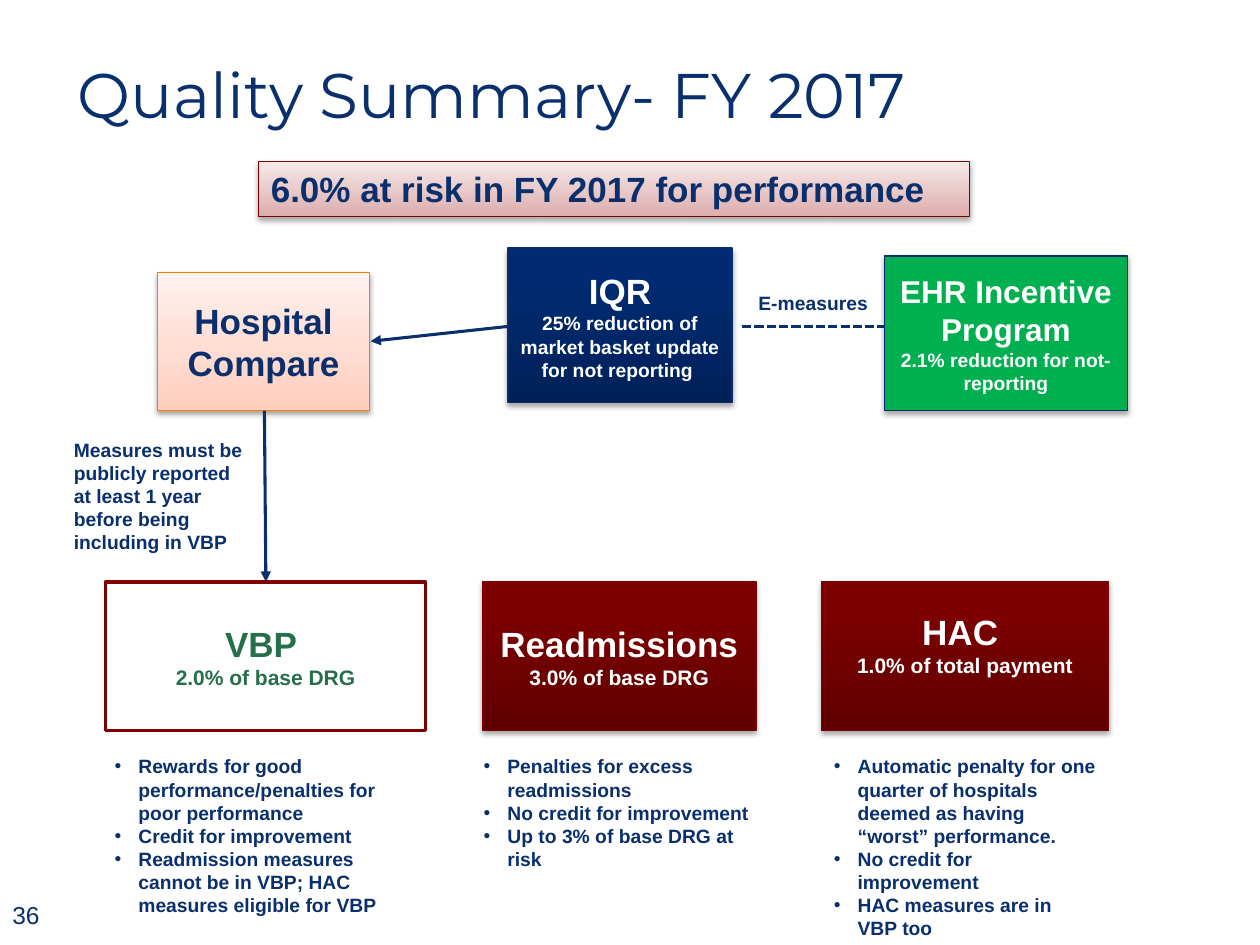
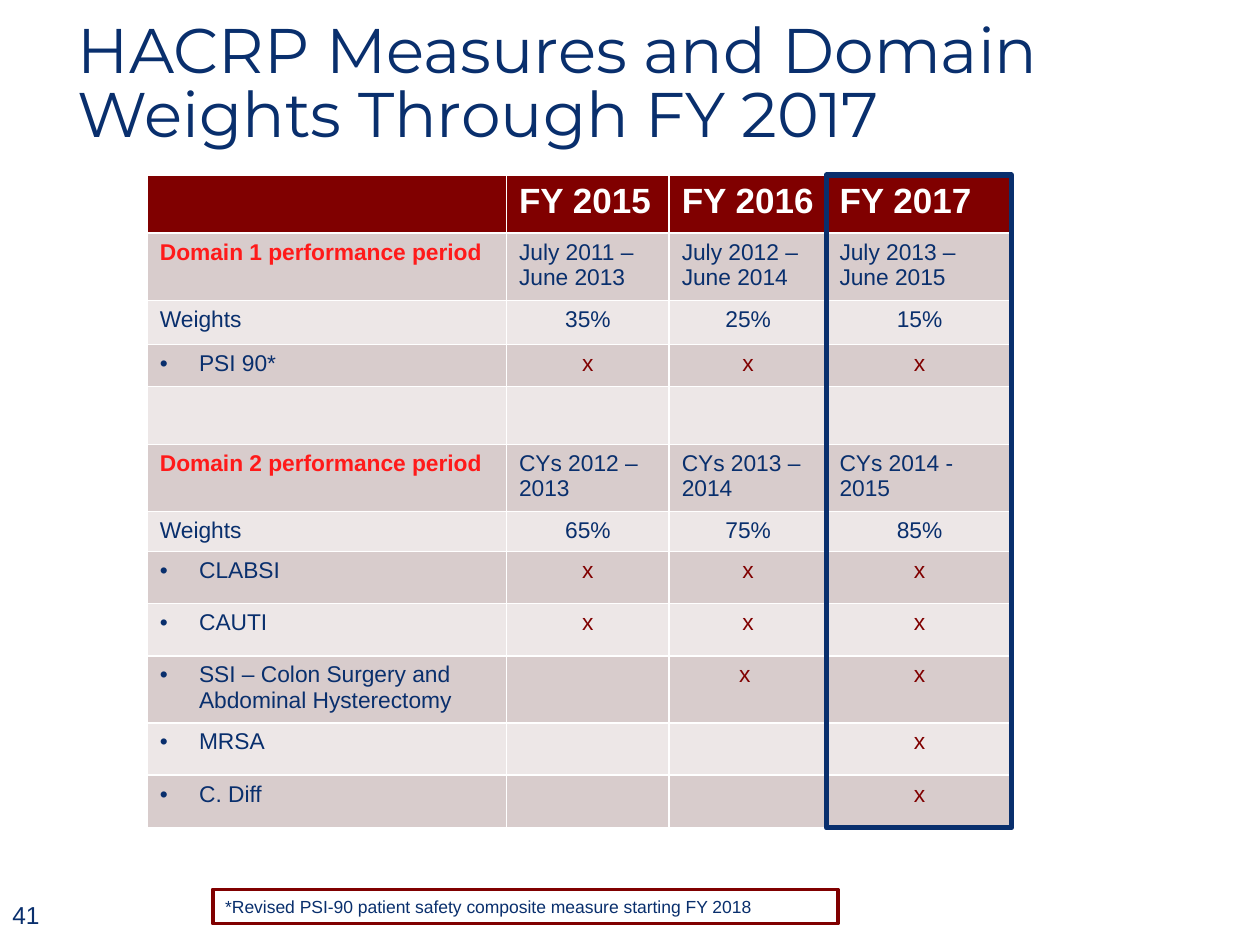
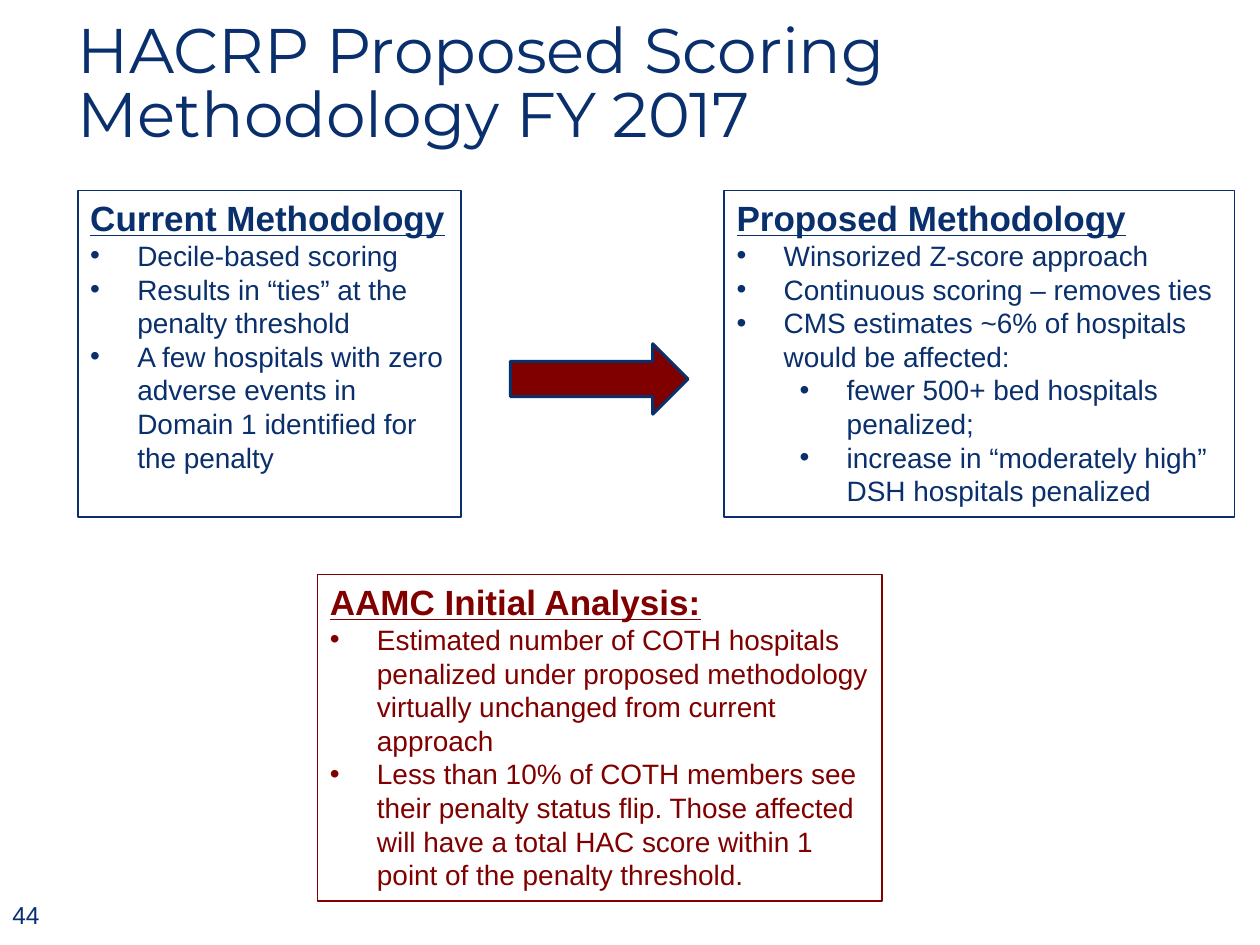
from lxml import etree
from pptx import Presentation
from pptx import util as u
from pptx.dml import color
from pptx.enum import dml, shapes, text
from pptx.oxml import ns

NAVY, RED, WHITE, GREEN = "092F6D", "800000", "FFFFFF", "00B050"
PINK, PALE, ALERT, EDGE = "D8CCCC", "EDE7E7", "FF1A1A", "062D6D"
MID, TOP = text.MSO_ANCHOR.MIDDLE, text.MSO_ANCHOR.TOP
MAROON = [("600000", 0), ("7C0000", 0.8)]


def rgb(code):
    """Turn a hex string into a colour."""
    return color.RGBColor.from_string(code)


def area(*sizes):
    """Turn centimetres into lengths."""
    return [u.Cm(size) for size in sizes]


def child(parent, tag, **attrs):
    """Append a drawing element with its attributes."""
    return etree.SubElement(parent, ns.qn(tag), attrs)


def style(para, size, ink=NAVY, bold=False, face="Arial"):
    """Set the font of a paragraph."""
    font = para.font
    font.name, font.size, font.bold = face, u.Pt(size), bold
    font.color.rgb = rgb(ink)


def bullet(para, indent, level=0):
    """Give a paragraph a hanging bullet."""
    para.level = level
    props = para._p.get_or_add_pPr()
    props.set("marL", str(u.Cm(indent + 1.27 * level)))
    props.set("indent", str(-u.Cm(indent)))
    child(props, "a:buFont", typeface="Arial")
    child(props, "a:buChar", char="•")


def write(frame, lines, ink=NAVY, bold=False, align=None, anchor=TOP):
    """Fill a frame with lines of text and size."""
    frame.word_wrap, frame.vertical_anchor = True, anchor
    for i, (words, size) in enumerate(lines):
        para = frame.add_paragraph() if i else frame.paragraphs[0]
        para.text = words
        para.alignment = align or text.PP_ALIGN.LEFT
        style(para, size, ink, bold)


def label(slide, box, words, size, bold=False, anchor=TOP):
    """Add a plain text box."""
    frame = slide.shapes.add_textbox(*area(*box)).text_frame
    write(frame, [(words, size)], bold=bold, anchor=anchor)


def points(slide, box, items):
    """Add a box of small bold bullets."""
    frame = slide.shapes.add_textbox(*area(*box)).text_frame
    frame.word_wrap = True
    for i, item in enumerate(items):
        para = frame.add_paragraph() if i else frame.paragraphs[0]
        para.text = item
        bullet(para, 0.48)
        style(para, 11, bold=True)


def block(slide, box, fill, edge, width=0.75, kind=shapes.MSO_SHAPE.RECTANGLE):
    """Add a shape with a plain, graded or no fill."""
    shape = slide.shapes.add_shape(kind, *area(*box))
    shape.shadow.inherit = False
    if fill is None:
        shape.fill.background()
    elif isinstance(fill, str):
        shape.fill.solid()
        shape.fill.fore_color.rgb = rgb(fill)
    else:
        shape.fill.gradient()
        shape.fill.gradient_angle = 90
        for stop, (code, place) in zip(shape.fill.gradient_stops, fill):
            stop.color.rgb, stop.position = rgb(code), place
    shape.line.color.rgb, shape.line.width = rgb(edge), u.Pt(width)
    return shape


def shade(shape):
    """Cast a soft shadow below a shape."""
    effects = shape._element.spPr.find(ns.qn("a:effectLst"))
    cast = child(effects, "a:outerShdw", blurRad=str(u.Pt(3.1)),
                 dist=str(u.Pt(1.8)), dir="5400000", rotWithShape="0")
    child(child(cast, "a:srgbClr", val="000000"), "a:alpha", val="35000")


def card(slide, box, fill, edge, lines, ink=WHITE, width=0.75):
    """Add a box with centred bold lines."""
    shape = block(slide, box, fill, edge, width)
    write(shape.text_frame, lines, ink, True, text.PP_ALIGN.CENTER, MID)
    return shape


def link(slide, ends, dashed=False):
    """Draw a dashed line or an arrow."""
    line = slide.shapes.add_connector(shapes.MSO_CONNECTOR.STRAIGHT, *area(*ends))
    line.line.color.rgb, line.line.width = rgb(NAVY), u.Pt(1.75)
    if dashed:
        line.line.dash_style = dml.MSO_LINE.SQUARE_DOT
    else:
        child(line.line._get_or_add_ln(), "a:tailEnd", type="triangle")
    child(line._element.spPr, "a:effectLst")


def panel(slide, box, head, items, ink):
    """Add an outlined box with a heading and bullets of text and level."""
    frame = block(slide, box, None, ink, 1).text_frame
    write(frame, [(head, 20)], ink, True)
    frame.paragraphs[0].font.underline = True
    for words, level in items:
        para = frame.add_paragraph()
        para.text = words
        para.alignment = text.PP_ALIGN.LEFT
        bullet(para, 0.95, level)
        style(para, 16, ink)


def grid(slide, spot, widths, rows):
    """Add the measures table from rows of height and cells."""
    tall = sum(height for height, _ in rows)
    table = slide.shapes.add_table(
        len(rows), len(widths), *area(*spot, sum(widths), tall)).table
    for col, width in zip(table.columns, widths):
        col.width = u.Cm(width)
    for r, (height, cells) in enumerate(rows):
        table.rows[r].height = u.Cm(height)
        for c, words in enumerate(cells):
            cell = table.cell(r, c)
            cell.fill.solid()
            cell.fill.fore_color.rgb = rgb(RED if r == 0 else PINK if r % 2 else PALE)
            para = cell.text_frame.paragraphs[0]
            para.text = words.removeprefix("• ")
            domain = words.startswith("Domain")
            if words.startswith("•"):
                bullet(para, 0.79)
            if words.endswith("%") or words.strip() == "x":
                para.alignment = text.PP_ALIGN.CENTER
            ink = (WHITE if r == 0 else ALERT if domain
                   else RED if words.strip() == "x" else NAVY)
            style(para, 13 if r else 20, ink, r == 0 or domain)


def start(deck, title, number, top=1.3):
    """Add a slide with its title and number."""
    slide = deck.slides.add_slide(deck.slide_layouts[6])
    frame = slide.shapes.add_textbox(*area(1.57, top, 23.29, 1.73)).text_frame
    frame.margin_left = frame.margin_right = 0
    frame.margin_top = frame.margin_bottom = 0
    write(frame, [(title, 36)], anchor=text.MSO_ANCHOR.BOTTOM)
    frame.paragraphs[0].line_spacing = 0.85
    frame.paragraphs[0].font.name = "Montserrat"
    label(slide, (0, 17.93, 5.92, 1.02), number, 14, anchor=MID)
    return slide


def summary(deck):
    """Build the summary of quality programs."""
    slide = start(deck, "Quality Summary- FY 2017", "36", 0.91)
    banner = block(slide, (5.21, 3.25, 14.33, 1.12),
                   [("DDADAD", 0), ("F6E9E9", 1)], "7D0000")
    write(banner.text_frame, [("6.0% at risk in FY 2017 for performance", 20)], bold=True)
    iqr = card(slide, (10.24, 5, 4.52, 3.12), [("002158", 0), ("002B72", 0.8)], EDGE,
               [("IQR", 20),
                ("25% reduction of market basket update for not reporting ", 11)])
    compare = card(slide, (3.18, 5.49, 4.27, 2.79), [("FFCDBD", 0), ("FFF1EE", 1)],
                   "F97D00", [("Hospital Compare", 20)], NAVY)
    ehr = card(slide, (17.83, 5.16, 4.9, 3.12), GREEN, EDGE,
               [("EHR Incentive Program", 18), ("2.1% reduction for not-reporting", 11)])
    low, tall = 11.73, 3
    card(slide, (2.13, low, 6.45, tall), WHITE, RED,
         [("VBP ", 20), ("2.0% of base DRG", 12)], "256F4A", 2)
    readmit = card(slide, (9.73, low, 5.51, tall), MAROON, "7D0000",
                   [("Readmissions", 20), ("3.0% of base DRG", 12)])
    hac = card(slide, (16.56, low, 5.79, tall), MAROON, "7D0000",
               [("HAC ", 20), ("1.0% of total payment", 12)])
    hac.text_frame.margin_bottom = u.Cm(0.62)
    for shape in (banner, iqr, compare, ehr, readmit, hac):
        shade(shape)
    link(slide, (5.33, 8.28, 5.36, low))
    link(slide, (10.24, 6.58, 7.47, 6.88))
    link(slide, (14.96, 6.58, 17.83, 6.58), True)
    label(slide, (15.04, 5.74, 3.07, 0.74), "E-measures", 11, True)
    label(slide, (1.24, 8.71, 4.09, 2.62), "Measures must be publicly reported "
          "at least 1 year before being including in VBP", 11, True)
    for left, width, items in (
        (2.06, 6.53, ["Rewards for good performance/penalties for poor performance",
                      "Credit for improvement",
                      "Readmission measures cannot be in VBP; "
                      "HAC measures eligible for VBP"]),
        (9.5, 5.94, ["Penalties for excess readmissions",
                     "No credit for improvement",
                     "Up to 3% of base DRG at risk"]),
        (16.56, 5.79, ["Automatic penalty for one quarter of hospitals "
                       "deemed as having “worst” performance.",
                       "No credit for improvement",
                       "HAC measures are in VBP too"]),
    ):
        points(slide, (left, 15.09, width, 4), items)


def weights(deck):
    """Build the table of measures and weights."""
    slide = start(deck, "HACRP Measures and Domain Weights Through FY 2017", "41")
    grid(slide, (2.97, 3.53), (7.24, 3.28, 3.18, 3.73), [
        (1.17, ("", "FY 2015", "FY 2016", "FY 2017")),
        (1.27, ("Domain 1 performance period", "July 2011 – June 2013",
                "July 2012 – June 2014", "July 2013 – June 2015")),
        (0.89, ("Weights", "35%", "25%", "15%")),
        (0.84, ("• PSI 90*", "x", "x", "x")),
        (1.17, ("", "", "", "")),
        (1.27, ("Domain 2 performance period", "CYs 2012 – 2013",
                "CYs 2013 – 2014", "CYs 2014 - 2015")),
        (0.79, ("Weights", "65%", "75%", "85%")),
        (1.05, ("• CLABSI", "x", "x", "x")),
        (1.05, ("• CAUTI", "x", "x", "x")),
        (1.27, ("• SSI – Colon Surgery and Abdominal Hysterectomy", "", "x ", "x")),
        (1.05, ("• MRSA", "", "", "x")),
        (1.05, ("• C. Diff", "", "", "x")),
    ])
    block(slide, (16.66, 3.53, 3.73, 13.16), None, NAVY, 3)
    note = block(slide, (4.29, 17.93, 12.6, 0.69), WHITE, RED, 2)
    write(note.text_frame,
          [("*Revised PSI-90 patient safety composite measure starting FY 2018", 10)])


def scoring(deck):
    """Build the comparison of scoring methods."""
    slide = start(deck, "HACRP Proposed Scoring Methodology FY 2017", "44")
    panel(slide, (1.57, 3.84, 7.72, 6.58), "Current Methodology", [
        ("Decile-based scoring", 0),
        ("Results in “ties” at the penalty threshold", 0),
        ("A few hospitals with zero adverse events in Domain 1 "
         "identified for the penalty", 0)], NAVY)
    panel(slide, (14.6, 3.84, 10.29, 6.58), "Proposed Methodology", [
        ("Winsorized Z-score approach", 0),
        ("Continuous scoring – removes ties", 0),
        ("CMS estimates ~6% of hospitals would be affected:", 0),
        ("fewer 500+ bed hospitals penalized;", 1),
        ("increase in “moderately high” DSH hospitals penalized", 1)], NAVY)
    block(slide, (10.29, 6.93, 3.58, 1.42), RED, NAVY, 1.75,
          shapes.MSO_SHAPE.RIGHT_ARROW)
    panel(slide, (6.4, 11.58, 11.38, 6.58), "AAMC Initial Analysis:", [
        ("Estimated number of COTH hospitals penalized under proposed "
         "methodology virtually unchanged from current approach", 0),
        ("Less than 10% of COTH members see their penalty status flip. Those "
         "affected will have a total HAC score within 1 point of the "
         "penalty threshold.", 0)], RED)


def main():
    """Build and save the deck."""
    deck = Presentation()
    deck.slide_width, deck.slide_height = area(25.4, 19.05)
    summary(deck)
    weights(deck)
    scoring(deck)
    deck.save("out.pptx")


if __name__ == "__main__":
    main()
